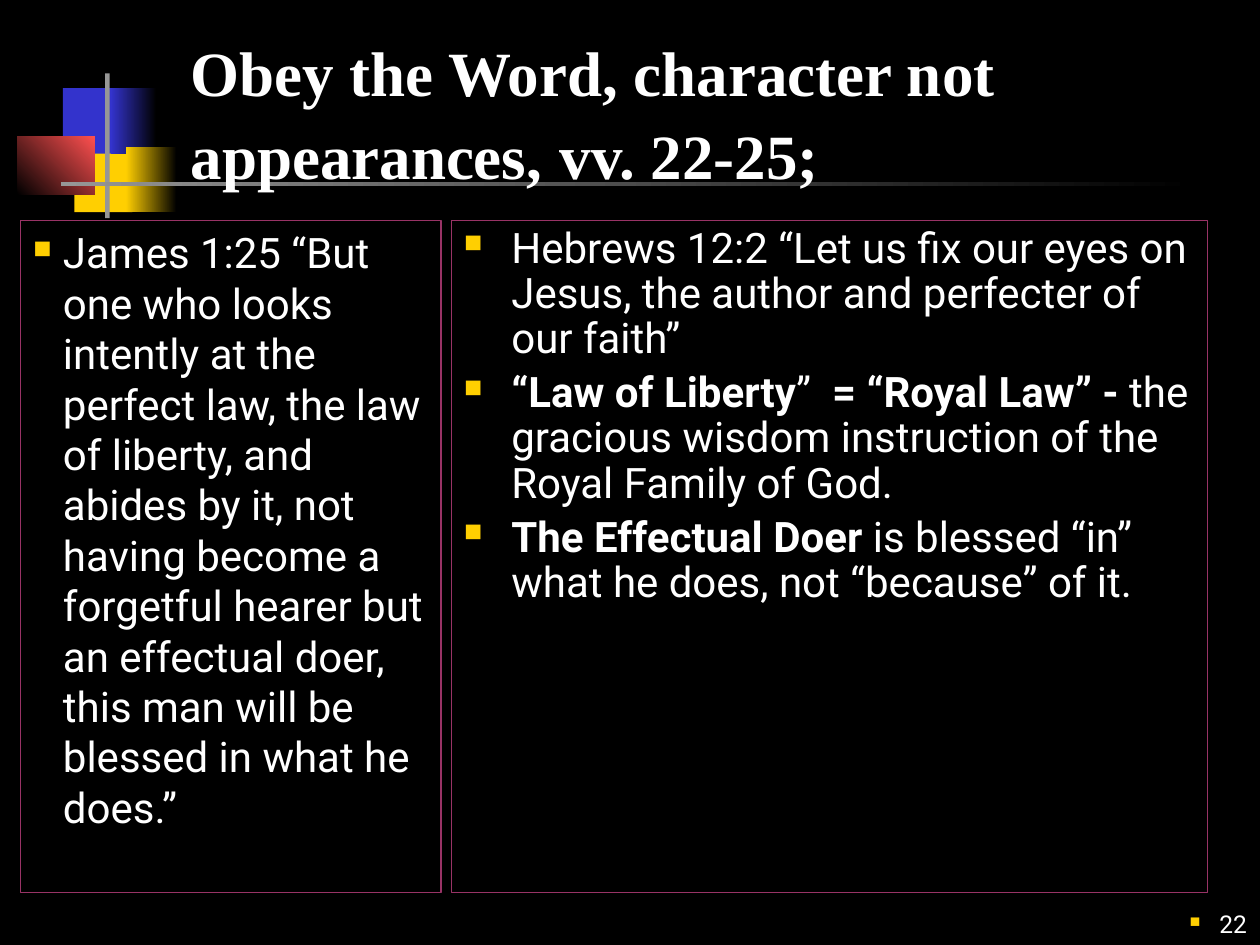
from lxml.etree import SubElement
from pptx import Presentation
from pptx.dml.color import RGBColor
from pptx.enum.shapes import MSO_SHAPE
from pptx.enum.text import MSO_ANCHOR, MSO_AUTO_SIZE, PP_ALIGN
from pptx.oxml.ns import qn
from pptx.util import Cm, Pt

BLACK = RGBColor(0x00, 0x00, 0x00)
WHITE = RGBColor(0xFF, 0xFF, 0xFF)
YELLOW = RGBColor(0xFF, 0xCF, 0x01)
BLUE = RGBColor(0x33, 0x33, 0xCC)
RED = RGBColor(0xFF, 0x50, 0x50)
GRAY = RGBColor(0x96, 0x96, 0x96)
PLUM = RGBColor(0x99, 0x33, 0x66)


def add_run(paragraph, text, size, bold=False, name="Roboto"):
    run = paragraph.add_run()
    run.text = text
    run.font.size = Pt(size)
    run.font.bold = bold
    run.font.name = name
    run.font.color.rgb = WHITE


def add_bullet(paragraph, indent):
    properties = paragraph._p.get_or_add_pPr()
    properties.set("marL", str(Cm(indent)))
    properties.set("indent", str(-Cm(indent)))
    color = SubElement(properties, qn("a:buClr"))
    SubElement(color, qn("a:srgbClr")).set("val", str(YELLOW))
    SubElement(properties, qn("a:buSzPct")).set("val", "60000")
    font = SubElement(properties, qn("a:buFont"))
    font.set("typeface", "Wingdings")
    font.set("charset", "2")
    SubElement(properties, qn("a:buChar")).set("char", "n")


presentation = Presentation()
presentation.slide_width = Cm(25.4)
presentation.slide_height = Cm(19.05)
slide = presentation.slides.add_slide(presentation.slide_layouts[5])
slide.background.fill.solid()
slide.background.fill.fore_color.rgb = BLACK

ornaments = [
    (1.5, 2.96, 1.17, 1.32, [YELLOW], 0),
    (1.27, 1.78, 1.22, 1.32, [BLUE], 0),
    (2.24, 1.78, 0.91, 1.32, [BLUE, BLACK], 0),
    (2.54, 2.96, 1.02, 1.32, [YELLOW, BLACK], 0),
    (0.35, 2.75, 1.56, 1.18, [BLACK, RED], 45),
    (2.12, 1.48, 0.09, 2.92, [GRAY], 0),
    (1.23, 3.67, 22.86, 0.09, [GRAY, BLACK], 0),
]
for left, top, width, height, colors, angle in ornaments:
    shape = slide.shapes.add_shape(
        MSO_SHAPE.RECTANGLE, Cm(left), Cm(top), Cm(width), Cm(height))
    shape.shadow.inherit = False
    shape.line.fill.background()
    if len(colors) == 1:
        shape.fill.solid()
        shape.fill.fore_color.rgb = colors[0]
    else:
        shape.fill.gradient()
        shape.fill.gradient_angle = angle
        for stop, color in zip(shape.fill.gradient_stops, colors):
            stop.color.rgb = color

number_box = slide.shapes.add_textbox(Cm(22.65), Cm(17.77), Cm(2.74), Cm(1.27))
number_box.text_frame.word_wrap = True
number_box.text_frame.vertical_anchor = MSO_ANCHOR.BOTTOM
paragraph = number_box.text_frame.paragraphs[0]
paragraph.alignment = PP_ALIGN.RIGHT
add_bullet(paragraph, 0.6)
add_run(paragraph, "22", 14)

panels = [
    (9.1, 15.24, 0.96, 0.9, [
        [("Hebrews 12:2 “Let us fix our eyes on Jesus, the author and "
          "perfecter of our faith”", False)],
        [("“Law of Liberty", True), ("”  ", False), ("= “Royal Law” -", True),
         (" the gracious wisdom instruction of the Royal Family of God.", False)],
        [("The Effectual Doer", True),
         (" is blessed “in” what he does, not “because” of it.", False)],
    ]),
    (0.42, 8.47, 0.6, 1.0, [
        [("James 1:25 “But one who looks intently at the perfect law, the law "
          "of liberty, and abides by it, not having become a forgetful hearer "
          "but an effectual doer, this man will be blessed in what he does.”",
          False)],
    ]),
]
for left, width, indent, spacing, paragraphs in panels:
    shape = slide.shapes.add_shape(
        MSO_SHAPE.RECTANGLE, Cm(left), Cm(4.45), Cm(width), Cm(13.55))
    shape.shadow.inherit = False
    shape.fill.background()
    shape.line.color.rgb = PLUM
    shape.line.width = Pt(0.75)
    frame = shape.text_frame
    frame.word_wrap = True
    frame.vertical_anchor = MSO_ANCHOR.TOP
    for index, runs in enumerate(paragraphs):
        paragraph = frame.add_paragraph() if index else frame.paragraphs[0]
        paragraph.alignment = PP_ALIGN.LEFT
        paragraph.line_spacing = spacing
        paragraph.space_before = Pt(4.8)
        add_bullet(paragraph, indent)
        for text, bold in runs:
            add_run(paragraph, text, 24, bold)

title = slide.shapes.title
title.left, title.top, title.width, title.height = (
    Cm(3.59), Cm(0.85), Cm(21.64), Cm(3.18))
title.text_frame.word_wrap = True
title.text_frame.auto_size = MSO_AUTO_SIZE.NONE
title.text_frame.vertical_anchor = MSO_ANCHOR.BOTTOM
paragraph = title.text_frame.paragraphs[0]
paragraph.alignment = PP_ALIGN.LEFT
for text, size in [("Obey the Word, character not appearances,", 36),
                   (" ", 40), ("vv. 22-25;", 36)]:
    add_run(paragraph, text, size, True, "Times New Roman")
slide.shapes._spTree.append(title._element)

presentation.save("out.pptx")
